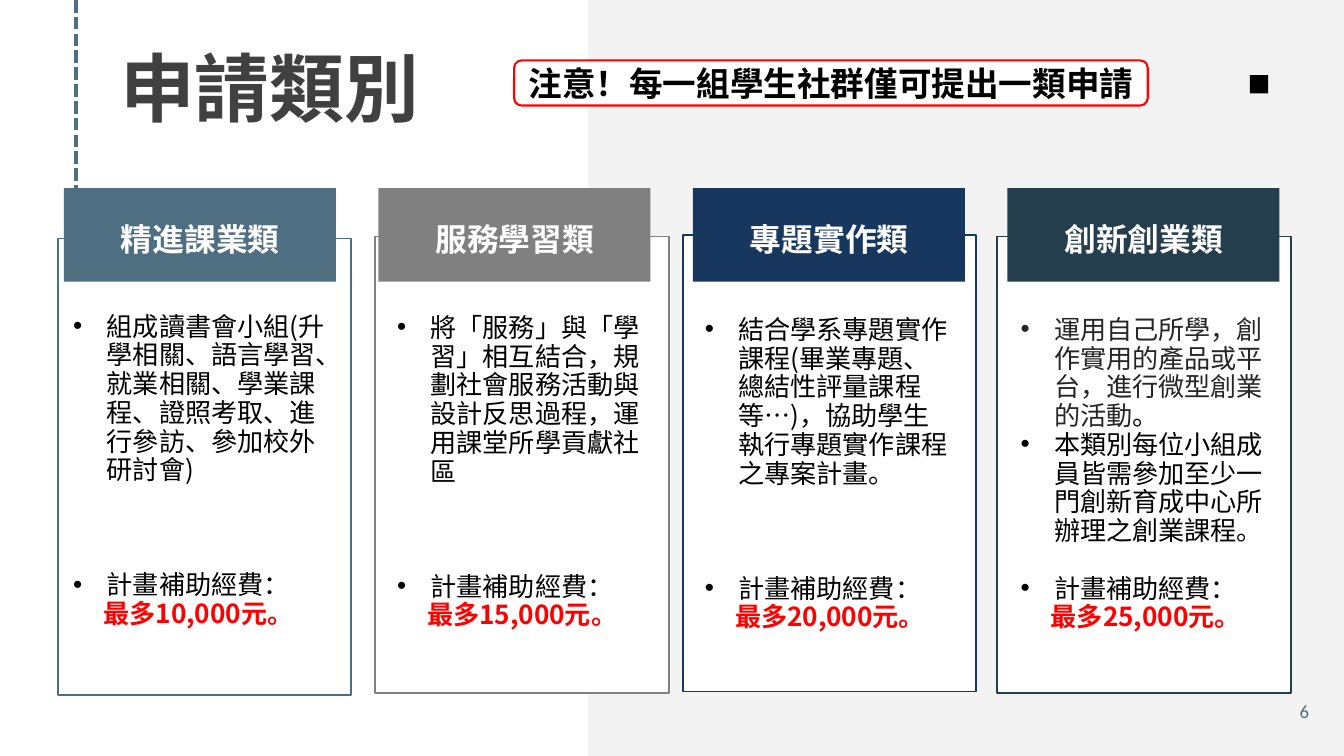
import pptx
import pptx.dml.color
import pptx.enum.dml
import pptx.enum.shapes
import pptx.enum.text
import pptx.oxml
import pptx.oxml.ns
import pptx.util
from pptx.util import Inches

COLORS = {
    "steel": "4E6E81", "gray": "808080", "navy": "17375E", "slate": "243E4D",
    "panel": "F2F1F1", "white": "FFFFFF", "black": "000000",
    "title": "404040", "soft_black": "262626", "red": "FF0000",
}
CJK = "Noto Sans CJK SC"
LINE_PT = 30.8
HEADER_LEFT, HEADER_PITCH = 0.95, 4.68
ALIGN = pptx.enum.text.PP_ALIGN
SHAPE = pptx.enum.shapes.MSO_SHAPE

# frame and body are (left, top, width, height); inset is the body's (side, top) margin;
# each task is a list of (text, color) runs; gap counts the lines above the funding item
CATEGORIES = [
    {"name": "精進課業類", "color": "steel", "frame": (0.86, 3.55, 4.37, 6.79),
     "body": (1.09, 4.65, 3.76, 5.22), "inset": (0, 0), "gap": 3, "funding": "10,000",
     "tasks": [[("組成讀書會小組(升學相關、語言學習、就業相關、學業課程、證照考取、"
                 "進行參訪、參加校外研討會)", "black")]]},
    {"name": "服務學習類", "color": "gray", "frame": (5.58, 3.52, 4.37, 6.79),
     "body": (5.81, 4.62, 3.88, 5.32), "inset": (0.1, 0.05), "gap": 3, "funding": "15,000",
     "tasks": [[("將「服務」與「學習」相互結合，規劃社會服務活動與設計反思過程，"
                 "運用課堂所學貢獻社區", "black")]]},
    {"name": "專題實作類", "color": "navy", "frame": (10.16, 3.5, 4.37, 6.79),
     "body": (10.39, 4.65, 3.88, 4.88), "inset": (0.1, 0.05), "gap": 3, "funding": "20,000",
     "tasks": [[("結合學系專題實作課程(畢業專題、總結性評量課程等…)，"
                 "協助學生執行專題實作課程之專案計畫。", "black")]]},
    {"name": "創新創業類", "color": "slate", "frame": (14.84, 3.52, 4.37, 6.79),
     "body": (15.09, 4.65, 3.88, 4.88), "inset": (0.1, 0.05), "gap": 1, "funding": "25,000",
     "tasks": [[("運用自己所學，創作實用的產品或平台，進行微型創業的活動", "soft_black"),
                ("。", "black")],
               [("本類別每位小組成員皆需參加至少一門創新育成中心所辦理之創業課程。", "black")]]},
]


def rgb(color):
    return pptx.dml.color.RGBColor.from_string(COLORS[color])


def add_box(slide, box, fill, line=None, width=2, kind=SHAPE.RECTANGLE):
    shape = slide.shapes.add_shape(kind, *map(Inches, box))
    shape.shadow.inherit = False
    shape.fill.solid()
    shape.fill.fore_color.rgb = rgb(fill)
    if line:
        shape.line.color.rgb = rgb(line)
        shape.line.width = pptx.util.Pt(width)
    else:
        shape.line.fill.background()
    return shape


def add_frame(slide, box, inset=(0, 0)):
    """Add a wrapping text box and return its text frame."""
    frame = slide.shapes.add_textbox(*map(Inches, box)).text_frame
    frame.word_wrap = True
    frame.margin_left = frame.margin_right = Inches(inset[0])
    frame.margin_top = frame.margin_bottom = Inches(inset[1])
    return frame


def add_run(paragraph, text, size, color, bold=False, font=CJK):
    run = paragraph.add_run()
    run.text = text
    run.font.size = pptx.util.Pt(size)
    run.font.bold = bold
    run.font.name = font
    run.font.color.rgb = rgb(color)
    east_asian = pptx.oxml.parse_xml(
        f'<a:ea {pptx.oxml.ns.nsdecls("a")} typeface="{font}"/>')
    run.font._element.find(pptx.oxml.ns.qn("a:latin")).addnext(east_asian)


def indent(paragraph, left, bullet=False):
    """Set the left margin, with a hanging bullet if asked."""
    properties = paragraph._p.get_or_add_pPr()
    properties.set("marL", str(Inches(left)))
    properties.set("indent", str(Inches(-left if bullet else 0)))
    if bullet:
        declared = pptx.oxml.ns.nsdecls("a")
        properties.append(pptx.oxml.parse_xml(f'<a:buFont {declared} typeface="Arial"/>'))
        properties.append(pptx.oxml.parse_xml(f'<a:buChar {declared} char="•"/>'))


def add_item(frame, runs, left=0.5, bullet=True, bold=False, gap=0):
    first = frame.paragraphs[0]
    paragraph = frame.add_paragraph() if first.runs else first
    paragraph.line_spacing = pptx.util.Pt(LINE_PT)
    paragraph.space_before = pptx.util.Pt(gap * LINE_PT)
    indent(paragraph, left, bullet)
    for text, color in runs:
        add_run(paragraph, text, 28, color, bold)


def add_category(slide, index, category):
    add_box(slide, category["frame"], "white", category["color"])

    left = HEADER_LEFT + index * HEADER_PITCH
    add_box(slide, (left, 2.8, 4.05, 1.39), category["color"])
    heading = add_frame(slide, (left + 0.18, 3.18, 3.7, 0.63)).paragraphs[0]
    heading.alignment = ALIGN.CENTER
    heading.line_spacing = pptx.util.Pt(47.6)
    add_run(heading, category["name"], 34, "white", bold=True)

    body = add_frame(slide, category["body"], category["inset"])
    for runs in category["tasks"]:
        add_item(body, runs)
    add_item(body, [("計畫補助經費：", "black")], gap=category["gap"])
    add_item(body, [(f"最多{category['funding']}元。", "red")],
             left=0.45, bullet=False, bold=True)


def add_background(slide):
    dashes = slide.shapes.add_connector(
        pptx.enum.shapes.MSO_CONNECTOR.STRAIGHT,
        Inches(1.13), Inches(0), Inches(1.13), Inches(4.12))
    dashes.line.color.rgb = rgb("steel")
    dashes.line.width = pptx.util.Pt(4.5)
    dashes.line.dash_style = pptx.enum.dml.MSO_LINE.SQUARE_DOT
    dashes._element.spPr.append(
        pptx.oxml.parse_xml(f'<a:effectLst {pptx.oxml.ns.nsdecls("a")}/>'))

    panel = add_box(slide, (8.75, 0, 11.25, 11.25), "panel")
    panel_color = panel._element.spPr.find(".//" + pptx.oxml.ns.qn("a:srgbClr"))
    panel_color.append(pptx.oxml.parse_xml(
        f'<a:alpha {pptx.oxml.ns.nsdecls("a")} val="80000"/>'))
    add_box(slide, (18.6, 1.12, 0.27, 0.27), "black")


def add_notice(slide):
    notice = add_box(slide, (7.65, 0.9, 9.43, 0.67), "white", "red", 2.25,
                     SHAPE.ROUNDED_RECTANGLE).text_frame
    notice.word_wrap = True
    notice.vertical_anchor = pptx.enum.text.MSO_ANCHOR.MIDDLE
    notice.paragraphs[0].alignment = ALIGN.CENTER
    add_run(notice.paragraphs[0], "注意！每一組學生社群僅可提出一類申請", 36, "black", bold=True)


def add_page_number(slide):
    frame = add_frame(slide, (17.25, 10.38, 2.33, 0.4), (0.1, 0.05))
    frame.vertical_anchor = pptx.enum.text.MSO_ANCHOR.MIDDLE
    frame.paragraphs[0].alignment = ALIGN.RIGHT
    add_run(frame.paragraphs[0], "6", 20, "steel", font="Calibri")


def main():
    deck = pptx.Presentation()
    deck.slide_width, deck.slide_height = Inches(20), Inches(11.25)
    slide = deck.slides.add_slide(deck.slide_layouts[6])
    add_background(slide)
    title = add_frame(slide, (1.79, 0.63, 7.14, 1.35))
    add_run(title.paragraphs[0], "申請類別", 80, "title", bold=True)
    for index, category in enumerate(CATEGORIES):
        add_category(slide, index, category)
    add_notice(slide)
    add_page_number(slide)
    deck.save("out.pptx")


if __name__ == "__main__":
    main()
